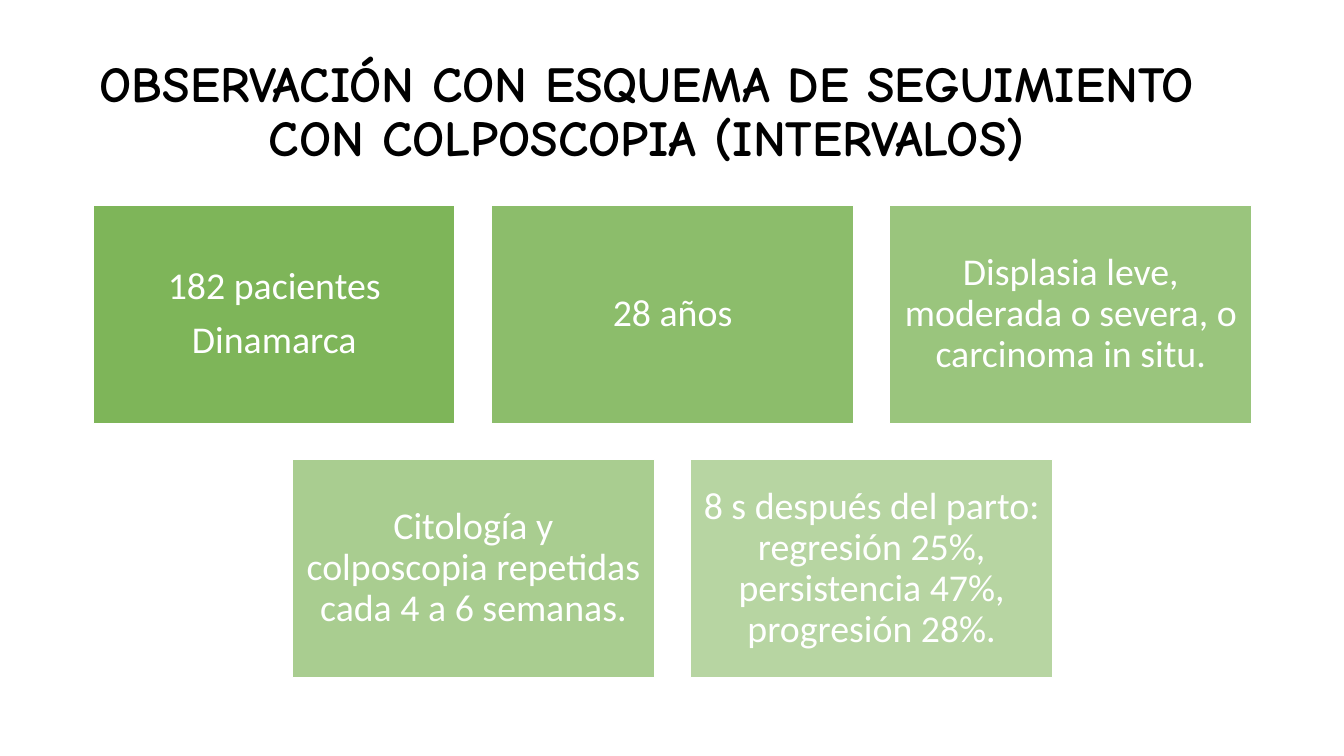
import lxml.etree
import pptx
import pptx.dml.color
import pptx.enum.shapes
import pptx.enum.text
import pptx.oxml.ns
import pptx.util

Inches = pptx.util.Inches
Pt = pptx.util.Pt
RGBColor = pptx.dml.color.RGBColor

GREEN = RGBColor(0x70, 0xAD, 0x47)
WHITE = RGBColor(0xFF, 0xFF, 0xFF)
BLACK = RGBColor(0x00, 0x00, 0x00)

SLIDE_WIDTH, SLIDE_HEIGHT = 13.33, 7.5
CARD_WIDTH, CARD_HEIGHT, GAP = 3.59, 2.16, 0.36
CARDS_CENTER, CARDS_TOP = 6.67, 2.04

TITLE = "OBSERVACIÓN CON ESQUEMA DE SEGUIMIENTO CON COLPOSCOPIA (INTERVALOS)"
TITLE_FONT = {"name": "Comic Neue", "size": Pt(36), "bold": True}
CARD_FONT = {"name": "Calibri", "size": Pt(27)}
TITLE_PARA = {"line_spacing": 0.9}
CARD_PARA = {"line_spacing": 0.9, "space_after": Pt(9.45)}
CARD_FRAME = {
    f"margin_{side}": Inches(0.11) for side in ("left", "top", "right", "bottom")
}

CARD_ROWS = [
    [
        ["182 pacientes", "Dinamarca"],
        ["28 años"],
        ["Displasia leve, moderada o severa, o carcinoma in situ."],
    ],
    [
        ["Citología y colposcopia repetidas cada 4 a 6 semanas."],
        ["8 s después del parto: regresión 25%, persistencia 47%, progresión 28%."],
    ],
]


def apply_format(target, values):
    """Set each attribute of the target from a dict."""
    for name, value in values.items():
        setattr(target, name, value)


def write_text(box, lines, font, color, para_format):
    """Write centred paragraphs in the middle of a box."""
    frame = box.text_frame
    frame.word_wrap = True
    frame.vertical_anchor = pptx.enum.text.MSO_ANCHOR.MIDDLE
    for index, line in enumerate(lines):
        para = frame.add_paragraph() if index else frame.paragraphs[0]
        para.alignment = pptx.enum.text.PP_ALIGN.CENTER
        apply_format(para, para_format)
        span = para.add_run()
        span.text = line
        apply_format(span.font, font)
        span.font.color.rgb = color


def add_title(page):
    """Add the slide heading."""
    box = page.shapes.add_textbox(
        Inches(0.41), Inches(0.4), Inches(12.01), Inches(1.45)
    )
    write_text(box, [TITLE], TITLE_FONT, BLACK, TITLE_PARA)


def set_opacity(box, percent):
    """Make the solid fill of a box partly transparent."""
    qn = pptx.oxml.ns.qn
    color = box.fill._xPr.find(qn("a:solidFill")).find(qn("a:srgbClr"))
    lxml.etree.SubElement(color, qn("a:alpha")).set("val", str(percent * 1000))


def add_card(page, left, top, lines, opacity):
    """Add one green card with its text."""
    box = page.shapes.add_shape(
        pptx.enum.shapes.MSO_SHAPE.RECTANGLE,
        Inches(left), Inches(top), Inches(CARD_WIDTH), Inches(CARD_HEIGHT),
    )
    box.shadow.inherit = False
    box.fill.solid()
    box.fill.fore_color.rgb = GREEN
    set_opacity(box, opacity)
    box.line.color.rgb = WHITE
    box.line.width = Pt(1)
    apply_format(box.text_frame, CARD_FRAME)
    write_text(box, lines, CARD_FONT, WHITE, CARD_PARA)


def add_cards(page):
    """Add centred rows of cards that fade from first to last."""
    opacity = 90
    for row, cards in enumerate(CARD_ROWS):
        row_width = len(cards) * (CARD_WIDTH + GAP) - GAP
        top = CARDS_TOP + row * (CARD_HEIGHT + GAP)
        for column, lines in enumerate(cards):
            left = CARDS_CENTER - row_width / 2 + column * (CARD_WIDTH + GAP)
            add_card(page, left, top, lines, opacity)
            opacity -= 10


def main():
    """Build the slide and save the deck."""
    deck = pptx.Presentation()
    deck.slide_width = Inches(SLIDE_WIDTH)
    deck.slide_height = Inches(SLIDE_HEIGHT)
    page = deck.slides.add_slide(deck.slide_layouts[6])
    add_title(page)
    add_cards(page)
    deck.save("out.pptx")


if __name__ == "__main__":
    main()
